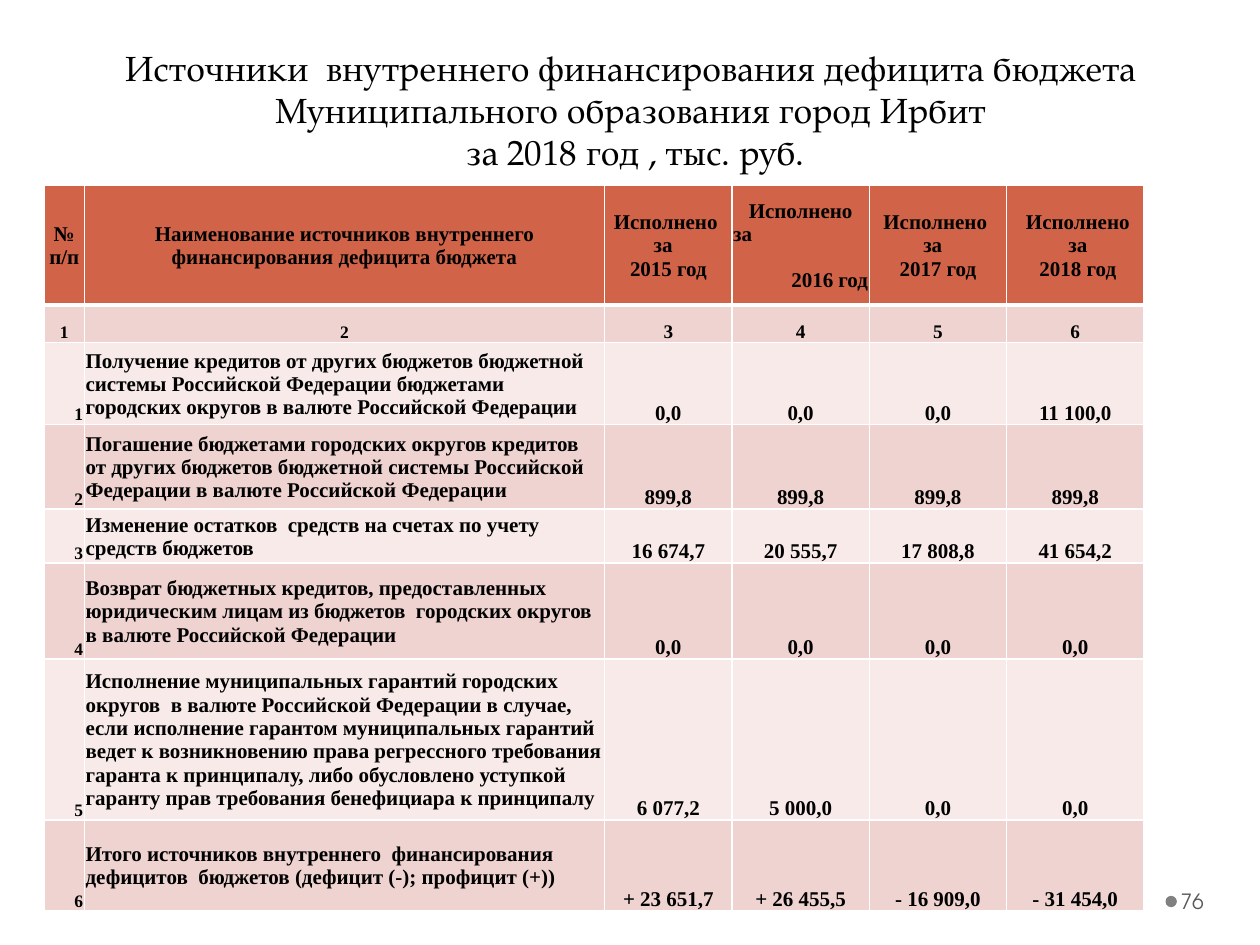
from lxml import etree
from pptx import Presentation
from pptx.dml.color import RGBColor
from pptx.enum.shapes import MSO_SHAPE
from pptx.enum.text import MSO_ANCHOR, PP_ALIGN
from pptx.oxml.ns import qn
from pptx.util import Inches, Pt

LEFT, MID, RIGHT = PP_ALIGN.LEFT, PP_ALIGN.CENTER, PP_ALIGN.RIGHT
SERIF = "Times New Roman"
COLS = [0.32, 4.13, 1.01, 1.09, 1.09, 1.09]
ROWS = [0.95, 0.3, 0.65, 0.67, 0.43, 0.76, 1.28, 0.72]
HEADS = [
    ["№ п/п"],
    ["Наименование источников внутреннего финансирования дефицита бюджета"],
    ["Исполнено ", "за  ", "2015 год"],
    ["Исполнено", "за", "2016 год"],
    ["Исполнено ", "за  ", "2017 год"],
    [" Исполнено", " за", " 2018 год"],
]
ITEMS = [
    ("Получение кредитов от других бюджетов бюджетной системы Российской "
     "Федерации бюджетами городских округов в валюте Российской Федерации",
     ["0,0", "0,0", "0,0", "11 100,0"]),
    ("Погашение бюджетами городских округов кредитов от других бюджетов "
     "бюджетной системы Российской Федерации в валюте Российской Федерации",
     ["899,8"] * 4),
    ("Изменение остатков  средств на счетах по учету средств бюджетов",
     ["16 674,7", "20 555,7", "17 808,8", "41 654,2"]),
    ("Возврат бюджетных кредитов, предоставленных юридическим лицам из "
     "бюджетов  городских округов в валюте Российской Федерации",
     ["0,0"] * 4),
    ("Исполнение муниципальных гарантий городских округов  в валюте "
     "Российской Федерации в случае, если исполнение гарантом муниципальных "
     "гарантий ведет к возникновению права регрессного требования гаранта к "
     "принципалу, либо обусловлено уступкой гаранту прав требования "
     "бенефициара к принципалу",
     ["6 077,2", "5 000,0", "0,0", "0,0"]),
    ("Итого источников внутреннего  финансирования дефицитов  бюджетов "
     "(дефицит (-); профицит (+))",
     ["+ 23 651,7", "+ 26 455,5", "- 16 909,0", "- 31 454,0"]),
]


def paint(target, color):
    target.solid()
    target.fore_color.rgb = RGBColor.from_string(color)


def write(frame, lines, size, name, color, align, bold=False):
    frame.text = "\n".join(lines)
    for para in frame.paragraphs:
        para.alignment = align
        font = para.font
        font.size, font.name, font.bold = Pt(size), name, bold
        font.color.rgb = RGBColor.from_string(color)


def add_text(slide, box, lines, size, name, color, align, anchor, insets):
    frame = slide.shapes.add_textbox(*map(Inches, box)).text_frame
    frame.word_wrap = True
    frame.vertical_anchor = anchor
    (frame.margin_left, frame.margin_top,
     frame.margin_right, frame.margin_bottom) = map(Inches, insets)
    write(frame, lines, size, name, color, align)


def add_edges(cell, top, bottom):
    """Draw white borders; top and bottom are widths in points."""
    props = cell._tc.get_or_add_tcPr()
    edges = {"a:lnL": 1, "a:lnR": 1, "a:lnT": top, "a:lnB": bottom}
    for spot, (tag, width) in enumerate(edges.items()):
        line = etree.Element(qn(tag), w=str(Pt(width)))
        fill = etree.SubElement(line, qn("a:solidFill"))
        etree.SubElement(fill, qn("a:srgbClr"), val="FFFFFF")
        props.insert(spot, line)


def fill_cell(cell, lines, size, align, anchor, color):
    write(cell.text_frame, lines, size, SERIF, "000000", align, True)
    cell.vertical_anchor = anchor
    cell.margin_left = cell.margin_right = cell.margin_top = Inches(0.01)
    cell.margin_bottom = 0
    paint(cell.fill, color)


def add_budget(slide, left, top):
    table = slide.shapes.add_table(
        len(ROWS), len(COLS), Inches(left), Inches(top),
        Inches(sum(COLS)), Inches(sum(ROWS))).table
    for col, width in zip(table.columns, COLS):
        col.width = Inches(width)
    for row, height in zip(table.rows, ROWS):
        row.height = Inches(height)

    low, center = MSO_ANCHOR.BOTTOM, MSO_ANCHOR.MIDDLE
    for c, lines in enumerate(HEADS):
        fill_cell(table.cell(0, c), lines, 12, MID, center, "D16349")
        fill_cell(table.cell(1, c), [str(c + 1)], 10 if c < 2 else 11,
                  MID, low, "EED3D0")
    _, word, year = table.cell(0, 3).text_frame.paragraphs
    word.alignment, year.alignment = LEFT, RIGHT
    year.space_before = Pt(13)

    for r, (name, values) in enumerate(ITEMS, 2):
        color = "EED3D0" if r % 2 else "F7EAE9"
        fill_cell(table.cell(r, 0), [str(r - 1)], 10, RIGHT, low, color)
        fill_cell(table.cell(r, 1), [name], 12, LEFT, center, color)
        for c, value in enumerate(values, 2):
            fill_cell(table.cell(r, c), [value], 12, MID, low, color)

    for r, row in enumerate(table.rows):
        for cell in row.cells:
            add_edges(cell, 3 if r == 1 else 1, 3 if r == 0 else 1)


def add_number(slide, left, top):
    dot = slide.shapes.add_shape(
        MSO_SHAPE.OVAL, Inches(left), Inches(top + 0.16),
        Inches(0.09), Inches(0.09))
    dot.shadow.inherit = False
    paint(dot.fill, "808080")
    dot.line.fill.background()
    add_text(slide, (left + 0.09, top, 0.61, 0.4), ["76"], 12,
             "TeX Gyre Adventor", "595959", LEFT, MSO_ANCHOR.MIDDLE,
             (0.03, 0.05, 0.05, 0.05))


def main():
    deck = Presentation()
    deck.slide_width, deck.slide_height = Inches(10), Inches(7.5)
    slide = deck.slides.add_slide(deck.slide_layouts[6])
    paint(slide.background.fill, "FFFFFF")
    add_text(slide, (0.51, 0.37, 8.99, 1.02),
             ["Источники  внутреннего финансирования дефицита бюджета "
              "Муниципального образования город Ирбит\v за 2018 год , тыс. руб."],
             20, "TeX Gyre Pagella", "000000", MID, MSO_ANCHOR.BOTTOM,
             (0.05, 0, 0.05, 0.02))
    add_budget(slide, 0.35, 1.47)
    add_number(slide, 9.25, 6.95)
    deck.save("out.pptx")


if __name__ == "__main__":
    main()
